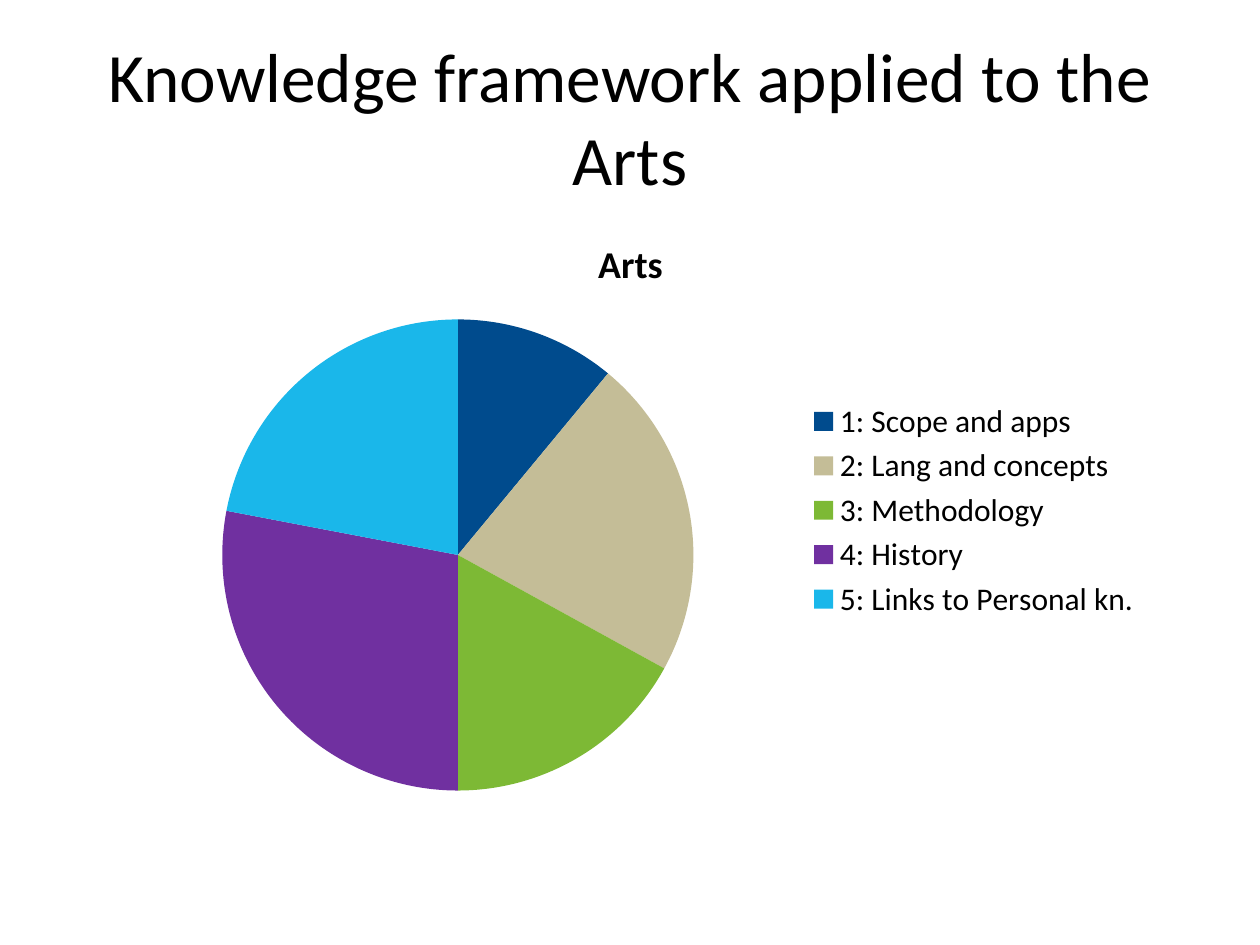
from lxml.etree import SubElement
from pptx import Presentation
from pptx.chart.data import CategoryChartData as ChartData
from pptx.dml.color import RGBColor as Color
from pptx.enum.chart import XL_CHART_TYPE as ChartType, XL_LEGEND_POSITION as LegendPlace
from pptx.enum.text import MSO_ANCHOR as Anchor, PP_ALIGN as Align
from pptx.oxml.ns import qn
from pptx.util import Pt

PX = 9144
FONT = "Calibri"
COLORS = {
    "text": "000000",
    "scope": "004B8D",
    "language": "C4BD97",
    "method": "7DB935",
    "history": "7030A0",
    "links": "1AB7EA",
}
SHARES = [
    ("1: Scope and apps", 11, "scope"),
    ("2: Lang and concepts", 22, "language"),
    ("3: Methodology", 17, "method"),
    ("4: History", 28, "history"),
    ("5: Links to Personal kn.", 22, "links"),
]
PIE_AREA = {"x": 0.11, "y": 0.18, "w": 0.45, "h": 0.79}


def color(name):
    return Color.from_string(COLORS[name])


def assign(target, values):
    for name, value in values.items():
        setattr(target, name, value)


def format_font(font, size, bold=False):
    assign(font, {"name": FONT, "size": Pt(size), "bold": bold})
    font.color.rgb = color("text")


def scale(box):
    return [length * PX for length in box]


def place_title(page, box, text):
    title = page.shapes.title
    assign(title, dict(zip(("left", "top", "width", "height"), scale(box))))
    frame = title.text_frame
    assign(frame, {"word_wrap": True, "vertical_anchor": Anchor.MIDDLE})
    para = frame.paragraphs[0]
    para.alignment = Align.CENTER
    span = para.add_run()
    span.text = text
    format_font(span.font, 39.6)


def set_plot_area(chart, area):
    plot_area = chart.plots[0]._element.getparent()
    for old in plot_area.findall(qn("c:layout")):
        plot_area.remove(old)
    layout = SubElement(plot_area, qn("c:layout"))
    plot_area.insert(0, layout)
    manual = SubElement(layout, qn("c:manualLayout"))
    settings = {"layoutTarget": "inner", "xMode": "edge", "yMode": "edge", **area}
    for name, value in settings.items():
        SubElement(manual, qn(f"c:{name}")).set("val", str(value))


def place_pie(page, box, name):
    labels, values, fills = zip(*SHARES)
    data = ChartData()
    data.categories = labels
    data.add_series(name, values)
    chart = page.shapes.add_chart(ChartType.PIE, *scale(box), data).chart
    format_font(chart.font, 18)

    chart.has_title = True
    chart.chart_title.include_in_layout = False
    span = chart.chart_title.text_frame.paragraphs[0].add_run()
    span.text = name
    format_font(span.font, 21.6, bold=True)

    chart.has_legend = True
    assign(chart.legend, {"position": LegendPlace.RIGHT, "include_in_layout": False})
    format_font(chart.legend.font, 18)

    plot = chart.plots[0]
    plot.vary_by_categories = True
    for index, fill in enumerate(fills):
        slice_format = plot.series[0].points[index].format
        slice_format.fill.solid()
        slice_format.fill.fore_color.rgb = color(fill)
        slice_format.line.fill.background()
    set_plot_area(chart, PIE_AREA)


def main():
    deck = Presentation()
    assign(deck, {"slide_width": 1000 * PX, "slide_height": 750 * PX})
    page = deck.slides.add_slide(deck.slide_layouts[5])
    place_title(page, (50, 30, 900, 125), "Knowledge framework applied to the Arts")
    place_pie(page, (85, 168, 831, 474), "Arts")
    deck.save("out.pptx")


if __name__ == "__main__":
    main()
